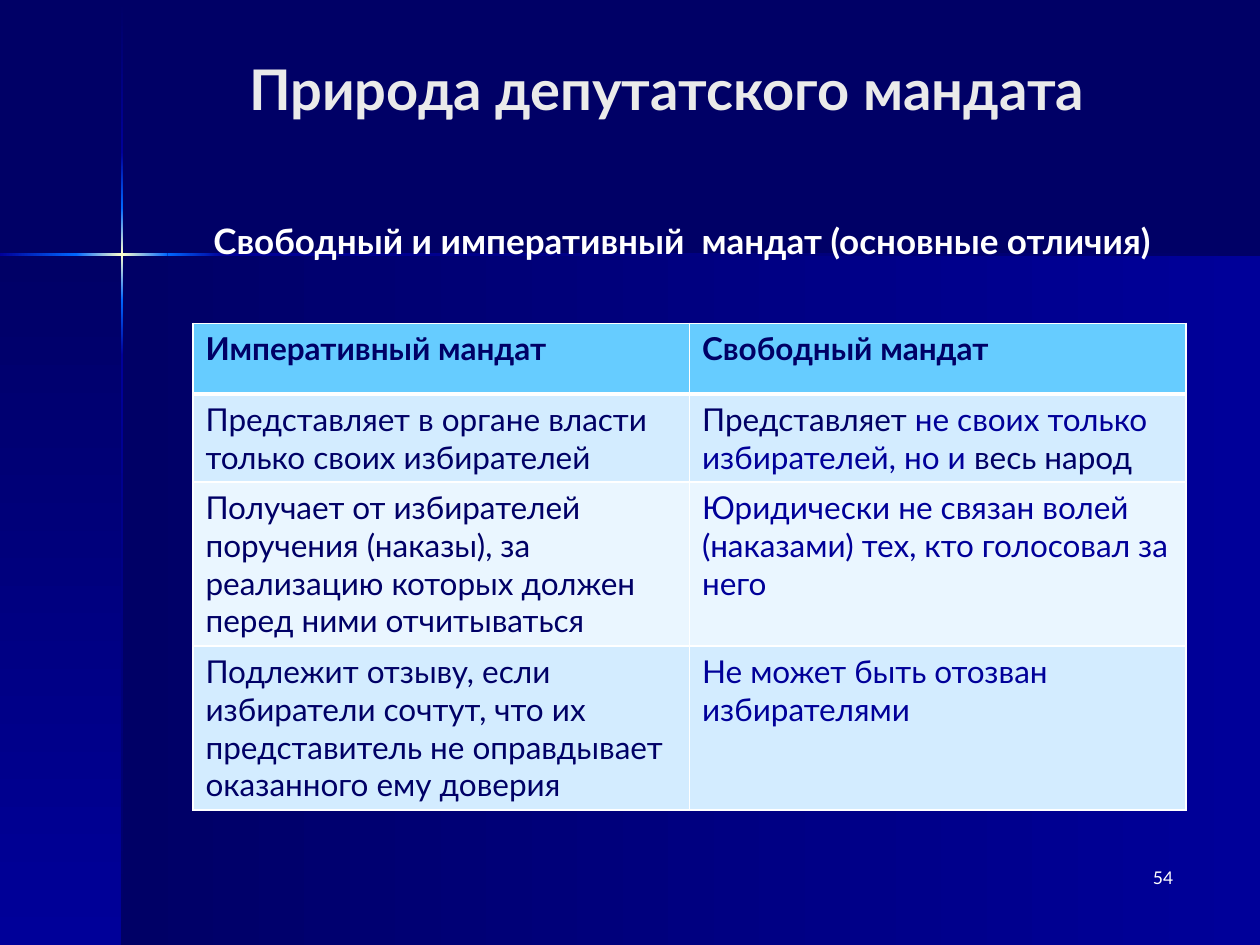
from lxml.etree import SubElement
from pptx import Presentation
from pptx.dml.color import RGBColor
from pptx.enum.shapes import MSO_SHAPE as SHAPE
from pptx.enum.text import MSO_ANCHOR as ANCHOR, PP_ALIGN as ALIGN
from pptx.oxml.ns import qn
from pptx.util import Cm, Pt

FONT = "Lato"
NAVY, BLUE, BRIGHT, CREAM = "000066", "000099", "0066FF", "FFFFCC"
WHITE, HEAD, BAND, PALE = "FFFFFF", "66CCFF", "D3ECFF", "EAF6FF"
SLIDE_W, SLIDE_H = 25.4, 19.05
AXIS_X, AXIS_Y, LINE = 2.46, 5.13, 0.05

ROWS = [
    [[("Императивный мандат", NAVY)], [("Свободный мандат", NAVY)]],
    [[("Представляет в органе власти только своих избирателей", NAVY)],
     [("Представляет ", NAVY), ("не своих только избирателей, но и ", BLUE),
      ("весь народ", NAVY)]],
    [[("Получает от избирателей поручения (наказы), за реализацию которых "
       "должен перед ними отчитываться", NAVY)],
     [("Юридически не связан волей (наказами) тех, кто голосовал за него", BLUE)]],
    [[("Подлежит отзыву, если избиратели сочтут, что их представитель "
       "не оправдывает оказанного ему доверия", NAVY)],
     [("Не может быть отозван избирателями", BLUE)]],
]
ROW_HEIGHTS = [1.42, 1.78, 3.3, 3.3]
ROW_FILLS = [HEAD, BAND, PALE, BAND]


def rgb(value):
    return RGBColor.from_string(value)


def style_run(r, size, color, bold=False):
    r.font.name = FONT
    r.font.size = Pt(size)
    r.font.bold = bold
    r.font.color.rgb = rgb(color)


def add_gradient(slide, x, y, w, h, colors, vertical):
    """Rectangle shaded evenly through the colors, rightwards or downwards."""
    sp = slide.shapes.add_shape(SHAPE.RECTANGLE, Cm(x), Cm(y), Cm(w), Cm(h))
    sp.shadow.inherit = False
    sp.line.fill.background()
    sp.fill.gradient()
    sp.fill.gradient_angle = 270 if vertical else 0
    stops = sp._element.spPr.find(".//" + qn("a:gsLst"))
    for stop in list(stops):
        stops.remove(stop)
    for i, color in enumerate(colors):
        stop = SubElement(stops, qn("a:gs"), pos=str(100000 * i // (len(colors) - 1)))
        SubElement(stop, qn("a:srgbClr"), val=color)


def add_background(slide):
    slide.background.fill.solid()
    slide.background.fill.fore_color.rgb = rgb(NAVY)
    # Panels below the horizontal axis
    panel_h = SLIDE_H - AXIS_Y
    add_gradient(slide, AXIS_X, AXIS_Y, SLIDE_W - AXIS_X, panel_h, [NAVY, BLUE], False)
    add_gradient(slide, 0, AXIS_Y, AXIS_X, panel_h, [NAVY, BLUE], True)
    # Vertical axis: start, end, colors
    for top, bottom, colors in [
        (0.03, 3.07, [NAVY, BLUE]), (7.16, SLIDE_H, [BLUE, NAVY]),
        (6.05, 7.16, [BRIGHT, BLUE]), (3.07, 4.19, [BLUE, BRIGHT]),
        (4.19, 6.05, [BRIGHT, CREAM, BRIGHT]),
    ]:
        add_gradient(slide, AXIS_X - LINE / 2, top, LINE, bottom - top, colors, True)
    # Horizontal axis
    for left, right, colors in [
        (4.5, SLIDE_W, [BLUE, NAVY]), (0, 1.53, [BLUE, BRIGHT]),
        (3.38, 4.5, [BRIGHT, BLUE]), (1.53, 3.38, [BRIGHT, CREAM, BRIGHT]),
    ]:
        add_gradient(slide, left, AXIS_Y - LINE / 2, right - left, LINE, colors, False)


def add_text(slide, text, x, y, w, h, size, color, align, bold=False,
             anchor=ANCHOR.TOP, top=0.13):
    tf = slide.shapes.add_textbox(Cm(x), Cm(y), Cm(w), Cm(h)).text_frame
    tf.word_wrap = True
    tf.vertical_anchor = anchor
    tf.margin_top = Cm(top)
    tf.text = text
    p = tf.paragraphs[0]
    p.alignment = align
    style_run(p.runs[0], size, color, bold)


def style_cell(cell, fill, bottom_width):
    tc_pr = cell._tc.get_or_add_tcPr()
    for side, width in [("L", 1), ("R", 1), ("T", 1), ("B", bottom_width)]:
        ln = SubElement(tc_pr, qn("a:ln" + side), w=str(Pt(width)))
        SubElement(SubElement(ln, qn("a:solidFill")), qn("a:srgbClr"), val=WHITE)
    cell.fill.solid()
    cell.fill.fore_color.rgb = rgb(fill)


def add_mandate_table(slide):
    table = slide.shapes.add_table(len(ROWS), 2, Cm(3.89), Cm(6.52),
                                   Cm(20.02), Cm(sum(ROW_HEIGHTS))).table
    for i, (row, height, fill) in enumerate(zip(ROWS, ROW_HEIGHTS, ROW_FILLS)):
        table.rows[i].height = Cm(height)
        for j, parts in enumerate(row):
            cell = table.cell(i, j)
            style_cell(cell, fill, 3 if i == 0 else 1)
            p = cell.text_frame.paragraphs[0]
            for text, color in parts:
                r = p.add_run()
                r.text = text
                style_run(r, 18, color, bold=i == 0)


def main():
    prs = Presentation()
    prs.slide_width, prs.slide_height = Cm(SLIDE_W), Cm(SLIDE_H)
    slide = prs.slides.add_slide(prs.slide_layouts[6])
    add_background(slide)
    # Page number, title and subtitle
    add_text(slide, "54", 18.62, 17.35, 5.28, 1.27, 10, WHITE, ALIGN.RIGHT)
    add_text(slide, "Природа депутатского мандата", 2.97, 0.84, 20.96, 1.88,
             32, "EAEAEA", ALIGN.CENTER, True, ANCHOR.MIDDLE)
    add_text(slide, "Свободный и императивный  мандат (основные отличия)",
             2.11, 3.33, 23.29, 15.72, 20, WHITE, ALIGN.CENTER, True, top=1.09)
    add_mandate_table(slide)
    prs.save("out.pptx")


if __name__ == "__main__":
    main()
